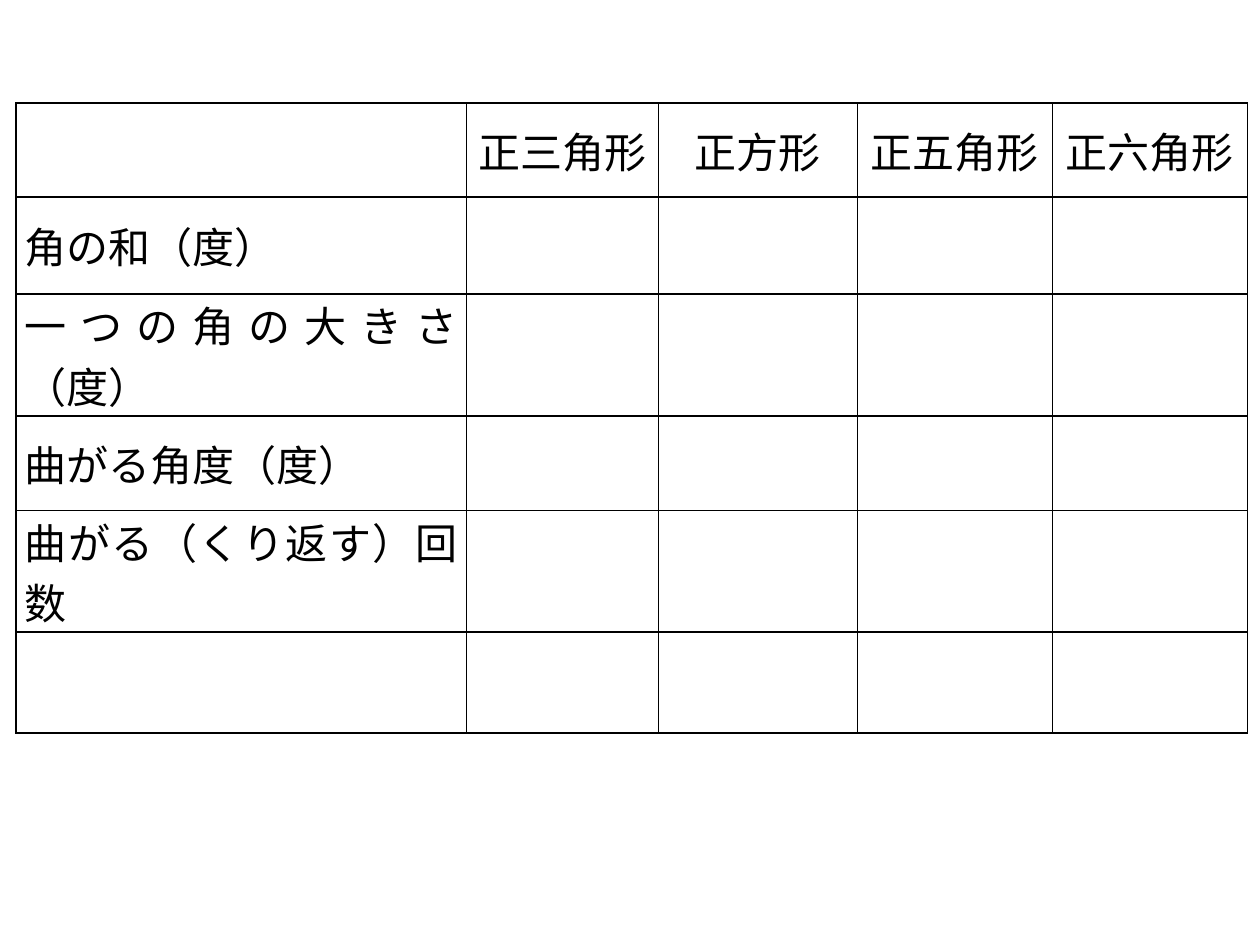
import pptx
import pptx.dml.color
import pptx.enum.text
import pptx.oxml
import pptx.oxml.ns
import pptx.util

Pt = pptx.util.Pt
PP_ALIGN = pptx.enum.text.PP_ALIGN

SHAPES = ["正三角形", "正方形", "正五角形", "正六角形"]
MEASURES = ["角の和（度）", "一つの角の大きさ（度）", "曲がる角度（度）",
            "曲がる（くり返す）回数", ""]
COL_WIDTHS = [257.5, 109.7, 113.5, 111.5, 111.5]
ROW_HEIGHTS = [53.5, 55.5, 56, 54, 55.5, 57.5]
LEFT, TOP = 9.2, 59
BLACK = "000000"


def rgb(color):
    return pptx.dml.color.RGBColor.from_string(color)


def add_borders(cell, color, width):
    tcPr = cell._tc.get_or_add_tcPr()
    for side in "LRTB":
        tcPr.append(pptx.oxml.parse_xml(
            f'<a:ln{side} {pptx.oxml.ns.nsdecls("a")} w="{Pt(width)}">'
            f'<a:solidFill><a:srgbClr val="{color}"/></a:solidFill></a:ln{side}>'))


def fill_cell(cell, text, align):
    add_borders(cell, BLACK, 1)
    cell.fill.background()
    cell.vertical_anchor = pptx.enum.text.MSO_ANCHOR.MIDDLE
    cell.margin_left = cell.margin_right = Pt(5)
    cell.margin_top = cell.margin_bottom = Pt(0)
    if not text:
        return
    p = cell.text_frame.paragraphs[0]
    p.text = text
    p.alignment = align
    for r in p.runs:
        r.font.size = Pt(24)
        r.font.name = "Calibri"
        r.font.color.rgb = rgb(BLACK)


prs = pptx.Presentation()
prs.slide_width, prs.slide_height = Pt(720), Pt(540)
s = prs.slides.add_slide(prs.slide_layouts[6])

rows = [["", *SHAPES]] + [[name] + [""] * len(SHAPES) for name in MEASURES]
table = s.shapes.add_table(len(rows), len(COL_WIDTHS), Pt(LEFT), Pt(TOP),
                           Pt(sum(COL_WIDTHS)), Pt(sum(ROW_HEIGHTS))).table
table.first_row = table.horz_banding = False
for col, width in zip(table.columns, COL_WIDTHS):
    col.width = Pt(width)
for row, height in zip(table.rows, ROW_HEIGHTS):
    row.height = Pt(height)
for i, row in enumerate(rows):
    for j, text in enumerate(row):
        fill_cell(table.cell(i, j), text,
                  PP_ALIGN.CENTER if i == 0 else PP_ALIGN.JUSTIFY)

prs.save("out.pptx")
